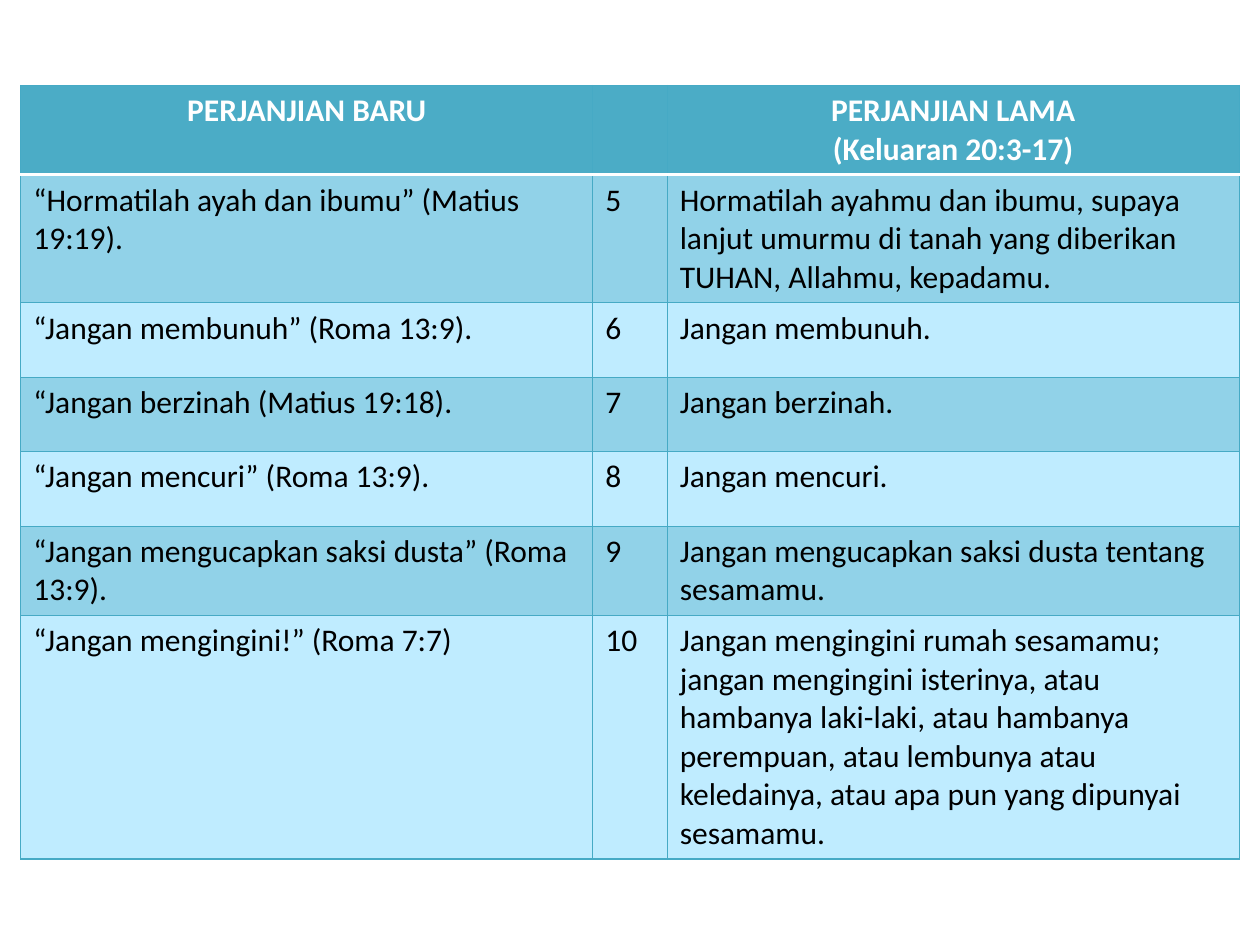
from lxml import etree
from pptx import Presentation
from pptx import util as u
from pptx.dml.color import RGBColor
from pptx.enum import text as t
from pptx.oxml.ns import qn

TEAL = RGBColor(0x4B, 0xAC, 0xC6)
EDGE = RGBColor(0x46, 0xAA, 0xC5)
BAND = RGBColor(0x91, 0xD2, 0xE8)
PALE = RGBColor(0xBF, 0xEC, 0xFF)
WHITE = RGBColor(0xFF, 0xFF, 0xFF)
BLACK = RGBColor(0, 0, 0)

WIDTHS = [11.53, 1.5, 11.53]
HEIGHTS = [1.75, 2.49, 1.5, 1.5, 1.5, 1.75, 4.75]
ROWS = [
    ("PERJANJIAN BARU", "", "PERJANJIAN LAMA\n(Keluaran 20:3-17)"),
    ("“Hormatilah ayah dan ibumu” (Matius 19:19).", "5",
     "Hormatilah ayahmu dan ibumu, supaya lanjut umurmu di tanah yang "
     "diberikan TUHAN, Allahmu, kepadamu."),
    ("“Jangan membunuh” (Roma 13:9).", "6", "Jangan membunuh."),
    ("“Jangan berzinah (Matius 19:18).", "7", "Jangan berzinah."),
    ("“Jangan mencuri” (Roma 13:9).", "8", "Jangan mencuri."),
    ("“Jangan mengucapkan saksi dusta” (Roma 13:9).", "9",
     "Jangan mengucapkan saksi dusta tentang sesamamu."),
    ("“Jangan mengingini!” (Roma 7:7)", "10",
     "Jangan mengingini rumah sesamamu; jangan mengingini isterinya, atau "
     "hambanya laki-laki, atau hambanya perempuan, atau lembunya atau "
     "keledainya, atau apa pun yang dipunyai sesamamu."),
]


def write(frame, words, size=18, color=BLACK, bold=False, align=t.PP_ALIGN.LEFT):
    frame.text = words
    for para in frame.paragraphs:
        para.alignment = align
        for font in [para.font] + [run.font for run in para.runs]:
            font.name = "Calibri"
            font.size = u.Pt(size)
            font.bold = bold
            font.color.rgb = color


def border(cell, side, color=EDGE, width=0.75):
    props = cell._tc.get_or_add_tcPr()
    line = etree.SubElement(props, qn("a:ln" + side), w=str(u.Pt(width)))
    fill = etree.SubElement(line, qn("a:solidFill"))
    etree.SubElement(fill, qn("a:srgbClr"), val=str(color))


def paint(cell, row):
    for side in "LRTB":
        if (row, side) in ((0, "B"), (1, "T")):
            border(cell, side, WHITE, 2)
        else:
            border(cell, side)
    cell.fill.solid()
    cell.fill.fore_color.rgb = TEAL if row == 0 else BAND if row % 2 else PALE


def build(slide):
    frame = slide.shapes.add_table(
        len(ROWS), len(WIDTHS), u.Cm(0.42), u.Cm(1.72),
        u.Cm(sum(WIDTHS)), u.Cm(sum(HEIGHTS)))
    table = frame.table
    for col, width in zip(table.columns, WIDTHS):
        col.width = u.Cm(width)
    for row, height in zip(table.rows, HEIGHTS):
        row.height = u.Cm(height)
    head = dict(color=WHITE, bold=True, align=t.PP_ALIGN.CENTER)
    for row, texts in enumerate(ROWS):
        for col, words in enumerate(texts):
            cell = table.cell(row, col)
            write(cell.text_frame, words, **(head if row == 0 else {}))
            paint(cell, row)


def main():
    deck = Presentation()
    deck.slide_width, deck.slide_height = u.Cm(25.4), u.Cm(19.05)
    build(deck.slides.add_slide(deck.slide_layouts[6]))
    deck.save("out.pptx")


if __name__ == "__main__":
    main()
